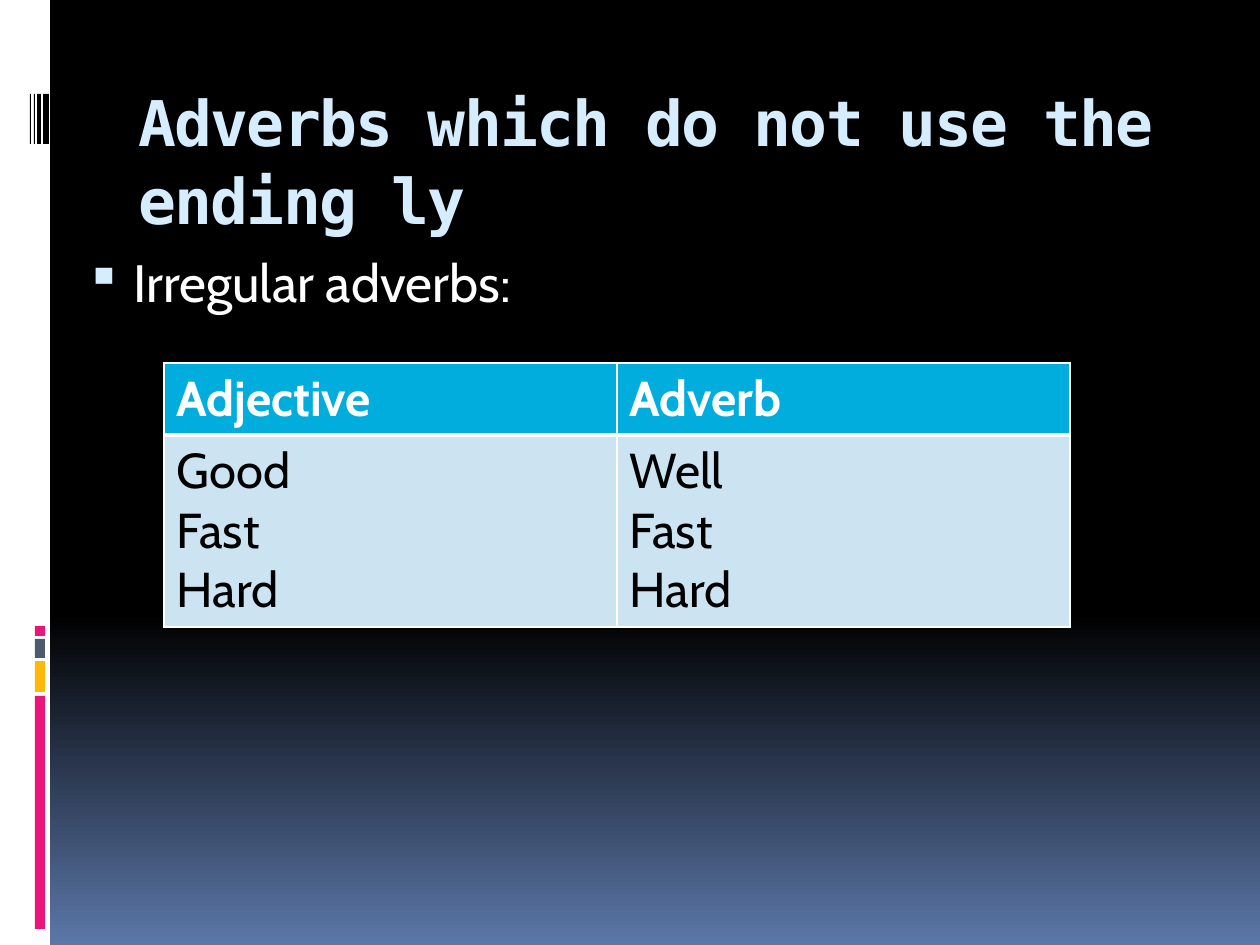
from lxml import etree
from pptx import Presentation
from pptx.dml.color import RGBColor
from pptx.enum.shapes import MSO_SHAPE
from pptx.enum.text import MSO_ANCHOR
from pptx.oxml import parse_xml
from pptx.oxml.ns import qn
from pptx.util import Pt

RECTANGLE = MSO_SHAPE.RECTANGLE
TOP = MSO_ANCHOR.TOP
PX = 914400 / 126
DRAWING = 'xmlns:a="http://schemas.openxmlformats.org/drawingml/2006/main"'
COLORS = {
    "white": "FFFFFF", "black": "000000", "pink": "EA157A", "amber": "FEB80A",
    "slate": "4E5B6F", "dusk": "5B77A8", "ice": "D6ECFF",
    "header": "00ADDC", "row": "CCE3F2",
}


def px(*lengths):
    return [round(length * PX) for length in lengths]


def add_span(para, text, font, size, color, bold=False):
    span = para.add_run()
    span.text = text
    span.font.name = font
    span.font.size = Pt(size)
    span.font.bold = bold
    span.font.color.rgb = RGBColor.from_string(COLORS[color])
    return span


deck = Presentation()
deck.slide_width, deck.slide_height = px(1260, 945)
page = deck.slides.add_slide(deck.slide_layouts[6])

# Background gradient: black for the upper two thirds, then dusk blue
background = page.background.fill
background.gradient()
background.gradient_angle = 270
stop_list = page.background._cSld.find(".//" + qn("a:gsLst"))
for stop in list(stop_list):
    stop_list.remove(stop)
for percent, color in [(0, "black"), (65, "black"), (100, "dusk")]:
    stop_list.append(parse_xml(
        f'<a:gs {DRAWING} pos="{percent * 1000}">'
        f'<a:srgbClr val="{COLORS[color]}"/></a:gs>'))

# Side strip with its coloured blocks and thin bars
side_blocks = [
    (0, 0, 50, 945, "white"),
    (35, 696, 10, 233, "pink"),
    (35, 661, 10, 31, "amber"),
    (35, 639, 10, 19, "slate"),
    (35, 626, 10, 10, "pink"),
]
side_blocks += [(left, 94, width, 50, "black")
                for left, width in [(43, 6), (37, 4), (34, 1), (30, 1)]]
for *place, color in side_blocks:
    block = page.shapes.add_shape(RECTANGLE, *px(*place))
    block.shadow.inherit = False
    block.fill.solid()
    block.fill.fore_color.rgb = RGBColor.from_string(COLORS[color])
    block.line.fill.background()

# Title
title = page.shapes.add_textbox(*px(126, 74, 1071, 126)).text_frame
title.word_wrap = True
title.vertical_anchor = TOP
para = title.paragraphs[0]
para.line_spacing = 1.04
span = add_span(para, "Adverbs which do not use the ending ly",
                "DejaVu Sans Mono", 36, "ice", bold=True)
span.font._element.set("spc", "-100")

# Bulleted line
body = page.shapes.add_textbox(*px(64, 244, 1134, 90)).text_frame
body.word_wrap = True
para = body.paragraphs[0]
props = para._p.get_or_add_pPr()
left_margin, hanging = px(57, -48)
props.set("marL", str(left_margin))
props.set("indent", str(hanging))
bullet_color = etree.SubElement(props, qn("a:buClr"))
etree.SubElement(bullet_color, qn("a:srgbClr"), val=COLORS["ice"])
etree.SubElement(props, qn("a:buSzPct"), val="95000")
etree.SubElement(props, qn("a:buChar"), char="▪")
add_span(para, "Irregular adverbs:", "Cabin", 30, "white")

# Table
rows = [
    (72, "header", "white", [["Adjective"], ["Adverb"]]),
    (192, "row", "black", [["Good", "Fast", "Hard"], ["Well", "Fast", "Hard"]]),
]
table = page.shapes.add_table(2, 2, *px(164, 363, 906, 264)).table
for row_index, (height, fill, color, entries) in enumerate(rows):
    table.rows[row_index].height = px(height)[0]
    is_header = row_index == 0
    for column_index, lines in enumerate(entries):
        cell = table.cell(row_index, column_index)
        cell_props = cell._tc.get_or_add_tcPr()
        for side in "LRTB":
            under_header = side == ("B" if is_header else "T")
            width = Pt(3 if under_header else 1)
            cell_props.append(parse_xml(
                f'<a:ln{side} {DRAWING} w="{width}"><a:solidFill>'
                f'<a:srgbClr val="{COLORS["white"]}"/></a:solidFill></a:ln{side}>'))
        cell.fill.solid()
        cell.fill.fore_color.rgb = RGBColor.from_string(COLORS[fill])
        for line_index, line in enumerate(lines):
            frame = cell.text_frame
            para = frame.add_paragraph() if line_index else frame.paragraphs[0]
            add_span(para, line, "Cabin", 28, color, bold=is_header)

deck.save("out.pptx")
